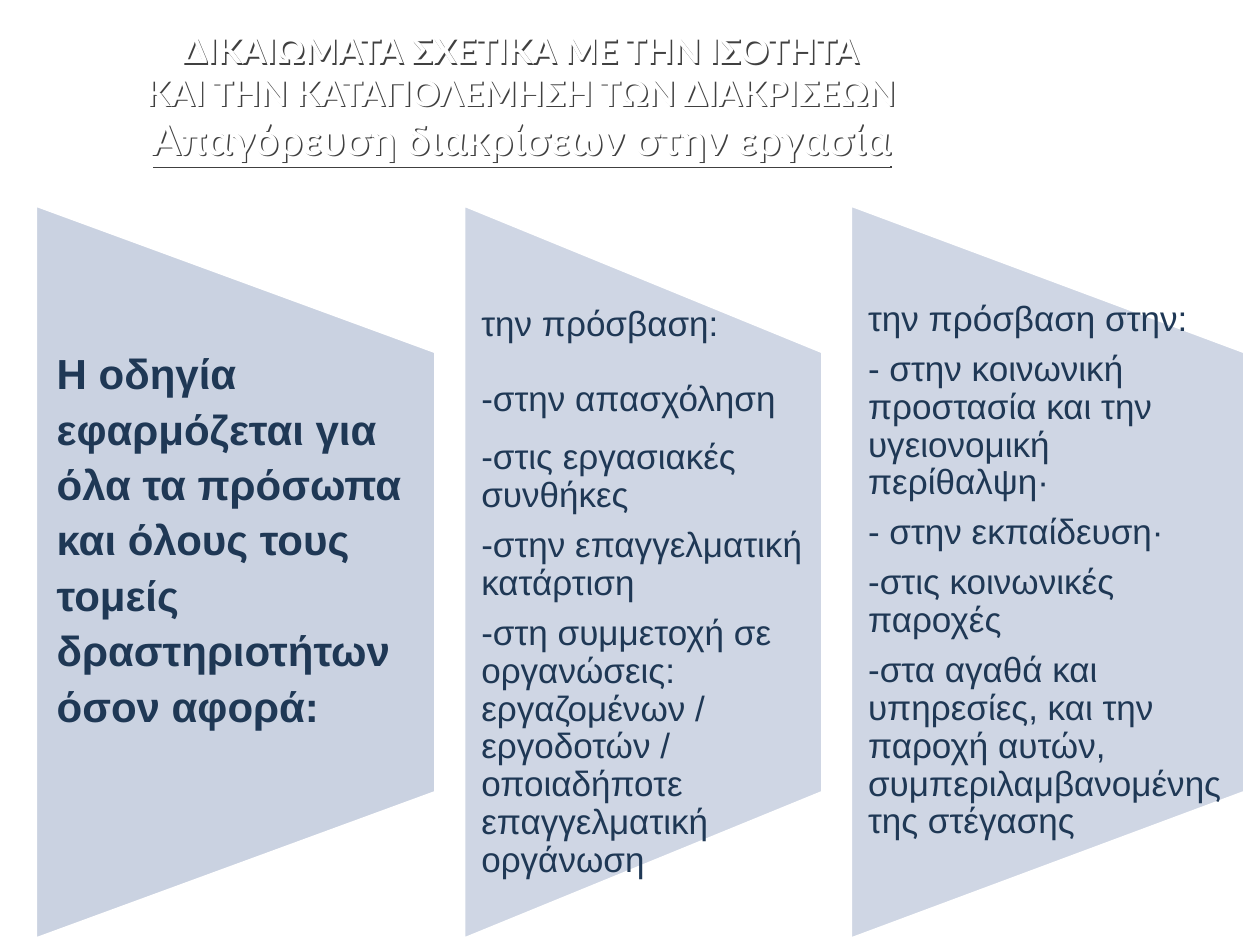
from lxml import etree
from pptx import Presentation
from pptx.dml.color import RGBColor
from pptx.enum.shapes import MSO_SHAPE
from pptx.enum.text import MSO_ANCHOR, MSO_AUTO_SIZE, PP_ALIGN
from pptx.oxml.ns import qn
from pptx.util import Inches, Pt

TRAPEZOID = MSO_SHAPE.FLOWCHART_MANUAL_OPERATION
TOP = MSO_ANCHOR.TOP
CENTER = PP_ALIGN.CENTER
NO_AUTOFIT = MSO_AUTO_SIZE.NONE

COLORS = {"white": "FFFFFF", "text": "1F3855", "first": "7187AF",
          "panel": "CFD6E4", "shadow": "404040"}


def rgb(name):
    return RGBColor.from_string(COLORS[name])


prs = Presentation()
prs.slide_width, prs.slide_height = Inches(10), Inches(7.5)
s = prs.slides.add_slide(prs.slide_layouts[5])

# Title: white letters that stand out by the shadow of their unfilled box
title = s.shapes.title
title.left, title.top = Inches(-0.43), Inches(0.21)
title.width, title.height = Inches(9.13), Inches(1.5)
title.fill.background()
effects = etree.SubElement(title._element.spPr, qn("a:effectLst"))
shadow = etree.SubElement(effects, qn("a:outerShdw"), blurRad="0",
                          dist="15000", dir="2700000", algn="tl")
etree.SubElement(shadow, qn("a:srgbClr"), val=COLORS["shadow"])
tf = title.text_frame
tf.word_wrap = True
tf.auto_size = NO_AUTOFIT
tf.vertical_anchor = TOP
tf.margin_top = Inches(0.02)
tf.text = ("ΔΙΚΑΙΩΜΑΤΑ ΣΧΕΤΙΚΑ ΜΕ ΤΗΝ ΙΣΟΤΗΤΑ\v"
           "ΚΑΙ ΤΗΝ ΚΑΤΑΠΟΛΕΜΗΣΗ ΤΩΝ ΔΙΑΚΡΙΣΕΩΝ\v"
           "Απαγόρευση διακρίσεων στην εργασία")
p = tf.paragraphs[0]
p.alignment = CENTER
for r, size in zip(p.runs, (20, 20, 24)):
    r.font.name = "Lato"
    r.font.size = Pt(size)
    r.font.bold = True
    r.font.underline = size == 24
    r.font.color.rgb = rgb("white")

# Panels: width, fill, text top, side margin, size, bold, line spacing,
# paragraphs as (text, space after in points)
panels = [
    (3.18, "first", 2.72, 0.17, 24, True, 1.1, [
        ("Η οδηγία εφαρμόζεται για όλα τα πρόσωπα και όλους τους τομείς "
         "δραστηριοτήτων όσον αφορά:", 0)]),
    (2.85, "panel", 2.43, 0.14, 20, False, 0.9, [
        ("την πρόσβαση:", 21.5),
        ("-στην απασχόληση", 11.5),
        ("-στις εργασιακές συνθήκες", 7),
        ("-στην επαγγελματική κατάρτιση", 7),
        ("-στη συμμετοχή σε οργανώσεις: εργαζομένων / εργοδοτών / "
         "οποιαδήποτε επαγγελματική οργάνωση", 0)]),
    (3.13, "panel", 2.39, 0.14, 20, False, 0.9, [
        ("την πρόσβαση στην:", 7),
        ("- στην κοινωνική προστασία και την υγειονομική περίθαλψη·", 7),
        ("- στην εκπαίδευση·", 7),
        ("-στις κοινωνικές παροχές", 7),
        ("-στα αγαθά και υπηρεσίες, και την παροχή αυτών, "
         "συμπεριλαμβανομένης της στέγασης", 0)]),
]
PANEL_HEIGHT, MIDDLE, GAP = 5.83, 4.54, 0.22

left = 0.28
for width, fill, text_top, margin, size, bold, spacing, paragraphs in panels:
    # The shape lies on its side, so its width is the panel's height
    sp = s.shapes.add_shape(
        TRAPEZOID, Inches(left + width / 2 - PANEL_HEIGHT / 2),
        Inches(MIDDLE - width / 2), Inches(PANEL_HEIGHT), Inches(width))
    sp.rotation = 270
    sp.shadow.inherit = False
    sp.fill.solid()
    sp.fill.fore_color.rgb = rgb(fill)
    sp.line.color.rgb = rgb("white")
    sp.line.width = Pt(2)
    if fill == "first":
        color = sp._element.spPr.find(qn("a:solidFill"))[0]
        etree.SubElement(color, qn("a:alpha"), val="37000")

    box = s.shapes.add_textbox(Inches(left), Inches(text_top),
                               Inches(width), Inches(3.5))
    tf = box.text_frame
    tf.word_wrap = True
    tf.vertical_anchor = TOP
    tf.margin_left = tf.margin_right = Inches(margin)
    tf.margin_top = tf.margin_bottom = 0
    for i, (text, after) in enumerate(paragraphs):
        p = tf.add_paragraph() if i else tf.paragraphs[0]
        p.text = text
        p.line_spacing = spacing
        p.space_after = Pt(after)
        font = p.runs[0].font
        font.name = "Arial"
        font.size = Pt(size)
        font.bold = bold
        font.color.rgb = rgb("text")
    left += width + GAP

prs.save("out.pptx")
